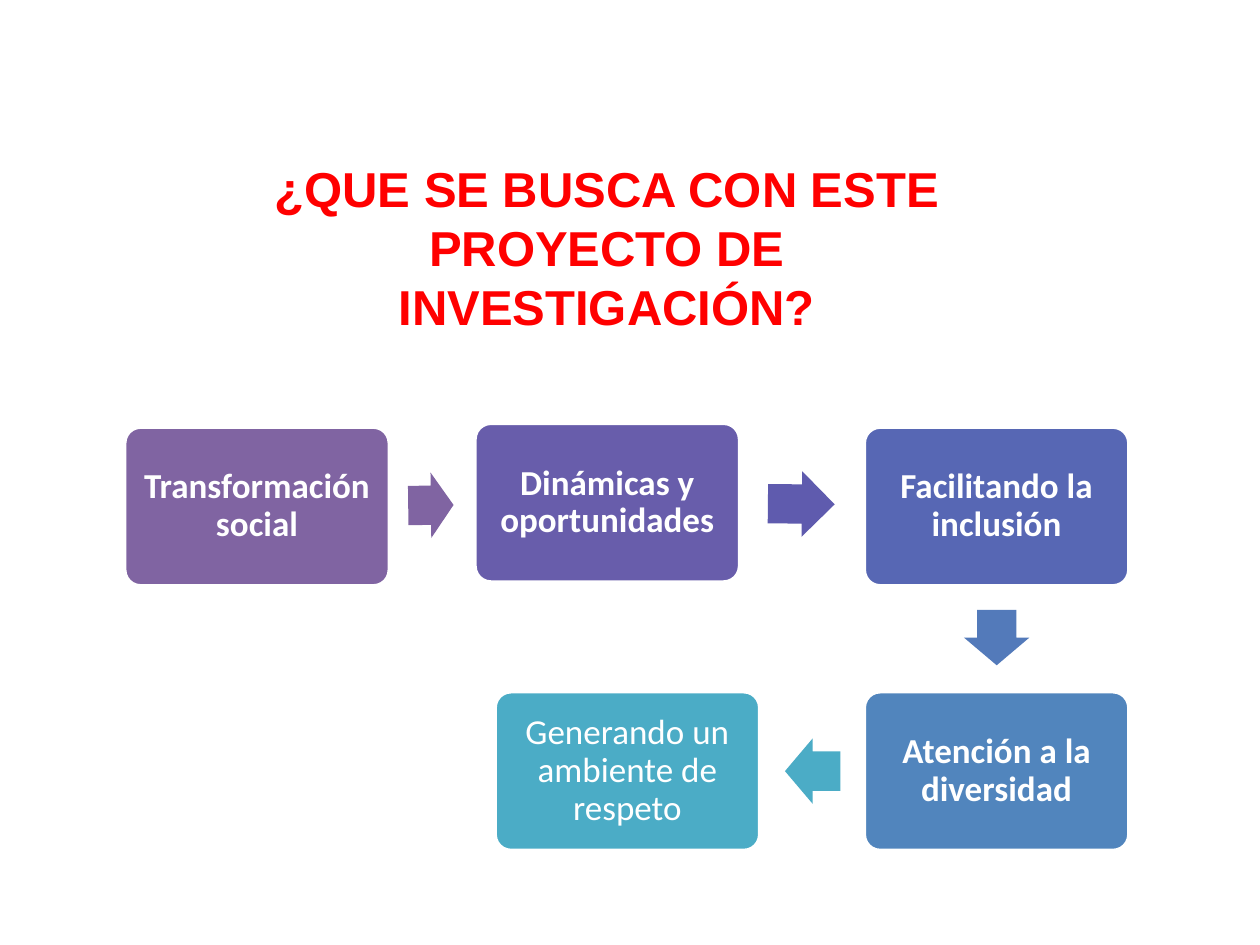
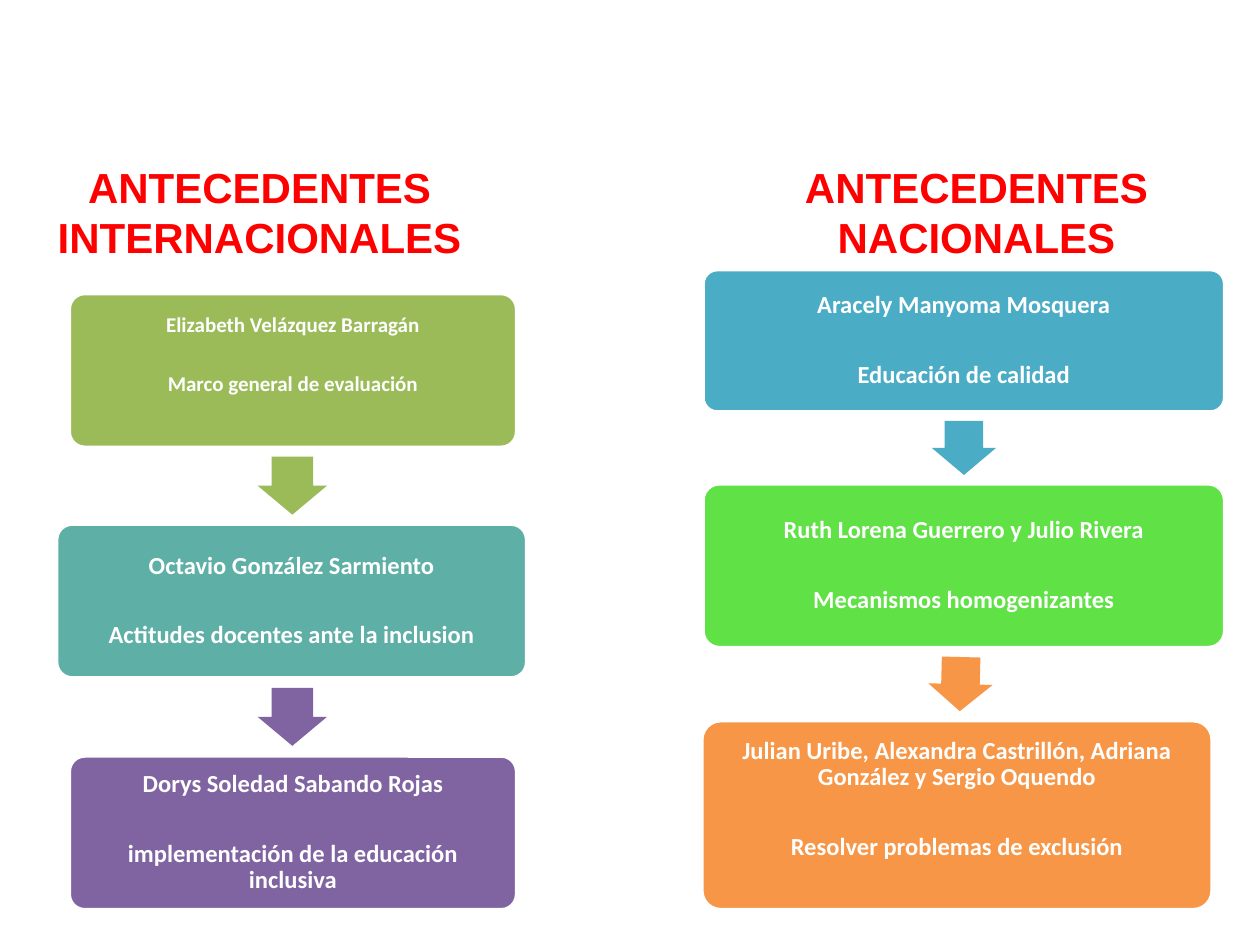
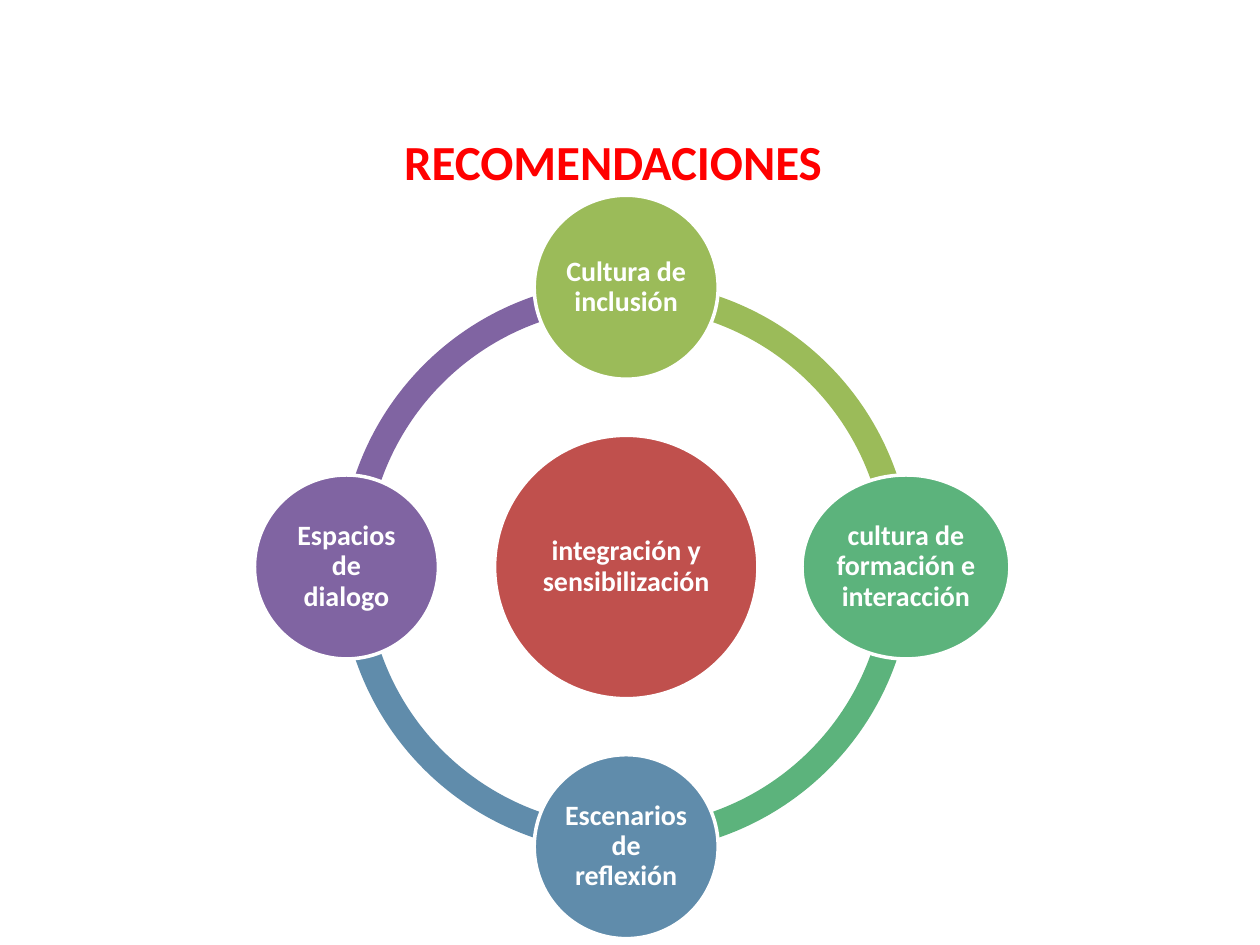
"""Build three slides on an inclusive education project: goals, background and recommendations."""
from math import cos, radians, sin

from pptx import Presentation
from pptx.dml.color import RGBColor
from pptx.enum.shapes import MSO_SHAPE as Preset
from pptx.enum.text import MSO_ANCHOR as Anchor, MSO_AUTO_SIZE as AutoSize, PP_ALIGN as Align
from pptx.util import Inches, Pt

WHITE = RGBColor(0xFF, 0xFF, 0xFF)
RED = RGBColor(0xFF, 0x00, 0x00)
PURPLE = RGBColor(0x80, 0x64, 0xA2)
VIOLET = RGBColor(0x68, 0x5D, 0xAB)
INDIGO = RGBColor(0x5F, 0x5B, 0xAE)
COBALT = RGBColor(0x57, 0x67, 0xB4)
AZURE = RGBColor(0x53, 0x7A, 0xBA)
BLUE = RGBColor(0x51, 0x85, 0xBD)
AQUA = RGBColor(0x4B, 0xAC, 0xC6)
OLIVE = RGBColor(0x9B, 0xBB, 0x59)
TEAL = RGBColor(0x5E, 0xAF, 0xA6)
LIME = RGBColor(0x60, 0xE1, 0x46)
ORANGE = RGBColor(0xF7, 0x96, 0x46)
JADE = RGBColor(0x5C, 0xB3, 0x7C)
STEEL = RGBColor(0x60, 0x8C, 0xAB)
BRICK = RGBColor(0xC0, 0x50, 0x4D)

GOAL_SIZE = (2.1, 1.26)
GOALS = [
    ("Transformación social", 0.99, 3.39, PURPLE, True),
    ("Dinámicas y oportunidades", 3.77, 3.36, VIOLET, True),
    ("Facilitando la inclusión", 6.86, 3.39, COBALT, True),
    ("Atención a la diversidad", 6.86, 5.49, BLUE, True),
    ("Generando un ambiente de respeto", 3.93, 5.49, AQUA, False),
]
GOAL_ARROWS = [
    (3.42, 4.01, 0.36, 359.3, PURPLE),
    (6.36, 4.0, 0.53, 0.6, INDIGO),
    (7.91, 5.06, 0.44, 90, AZURE),
    (6.45, 6.12, 0.44, 180, AQUA),
]

INTERNATIONAL = [
    ("Elizabeth Velázquez Barragán", "Marco general de evaluación",
     (0.55, 2.33, 3.55, 1.22), OLIVE, 12, 0.24),
    ("Octavio González Sarmiento", "Actitudes docentes ante la inclusion",
     (0.45, 4.16, 3.73, 1.22), TEAL, 14, 0),
    ("Dorys Soledad Sabando Rojas", "implementación de la educación inclusiva",
     (0.55, 6, 3.55, 1.22), PURPLE, 14, 0),
]
NATIONAL = [
    ("Aracely Manyoma Mosquera", "Educación de calidad",
     (5.58, 2.14, 4.14, 1.13), AQUA, 14, 0),
    ("Ruth Lorena Guerrero y Julio Rivera", "Mecanismos homogenizantes",
     (5.58, 3.84, 4.14, 1.3), LIME, 14, 0),
    ("Julian Uribe, Alexandra Castrillón, Adriana González y Sergio Oquendo",
     "Resolver problemas de exclusión", (5.57, 5.72, 4.05, 1.5), ORANGE, 14, 0.25),
]
STUDY_COLUMNS = [
    (INTERNATIONAL, (OLIVE, PURPLE), (0.46, 0.55), (90, 90)),
    (NATIONAL, (AQUA, ORANGE), (0.43, 0.51), (90, 91.5)),
]
THEME_GAP = 1.76

RING_CENTER = (4.97, 4.5)
RING_RADIUS = 2.22
ARC_SIZE = 4.54
HUB = ("integración y sensibilización", 2.09, BRICK)
NODE_HEIGHT = 1.46
NODES = [
    ("Cultura de inclusión", 1.46, OLIVE),
    ("cultura de formación e interacción", 1.65, JADE),
    ("Escenarios de reflexión", 1.46, STEEL),
    ("Espacios de\vdialogo", 1.46, PURPLE),
]
QUARTER_TURN = 54
FULL_TURN = 216


def write(box, text, size, color, bold=True, font="Calibri"):
    frame = box.text_frame
    frame.word_wrap = True
    frame.text = text
    for para in frame.paragraphs:
        para.alignment = Align.CENTER
        for span in para.runs:
            span.font.name, span.font.size, span.font.bold = font, Pt(size), bold
            span.font.color.rgb = color
    return frame


def add_heading(page, text, area, size, font="Arial", box=None):
    left, top, width, height = map(Inches, area)
    if box is None:
        box = page.shapes.add_textbox(left, top, width, height)
    else:
        box.left, box.top, box.width, box.height = left, top, width, height
    frame = write(box, text, size, RED, font=font)
    frame.auto_size = AutoSize.NONE
    frame.vertical_anchor = Anchor.TOP


def add_page(deck, title, area, size, font="Arial"):
    page = deck.slides.add_slide(deck.slide_layouts[5])
    add_heading(page, title, area, size, font, page.shapes.title)
    return page


def add_filled(page, preset, area, color):
    shape = page.shapes.add_shape(preset, *map(Inches, area))
    shape.shadow.inherit = False
    shape.fill.solid()
    shape.fill.fore_color.rgb = color
    shape.line.fill.background()
    return shape


def add_node(page, preset, area, color, text, size, margin, bold=True):
    node = add_filled(page, preset, area, color)
    node.line.color.rgb = WHITE
    node.line.width = Pt(2)
    if preset == Preset.ROUNDED_RECTANGLE:
        node.adjustments[0] = 0.1
    frame = write(node, text, size, WHITE, bold)
    frame.vertical_anchor = Anchor.MIDDLE
    frame.margin_left = frame.margin_right = Inches(margin)
    frame.margin_top = frame.margin_bottom = Inches(margin)
    for para in frame.paragraphs:
        para.line_spacing = 0.9
    return frame


def centered(x, y, width, height):
    return x - width / 2, y - height / 2, width, height


def add_arrow(page, x, y, length, breadth, angle, color):
    arrow = add_filled(page, Preset.RIGHT_ARROW, centered(x, y, length, breadth), color)
    arrow.adjustments[0], arrow.adjustments[1] = 0.6, 0.5
    arrow.rotation = angle


def build_goals(deck):
    page = add_page(deck, "¿QUE SE BUSCA CON ESTE PROYECTO DE INVESTIGACIÓN?",
                    (1.82, 1.21, 5.99, 2.12), 28)
    for text, left, top, color, bold in GOALS:
        add_node(page, Preset.ROUNDED_RECTANGLE, (left, top, *GOAL_SIZE),
                 color, text, 20, 0.08, bold)
    for x, y, length, angle, color in GOAL_ARROWS:
        add_arrow(page, x, y, length, 0.52, angle, color)


def add_studies(page, studies, arrow_colors, arrow_size, angles):
    for author, theme, area, color, size, lift in studies:
        frame = add_node(page, Preset.ROUNDED_RECTANGLE, area, color,
                         f"{author}\n{theme}", size, 0.06)
        frame.paragraphs[0].space_after = Pt(size * THEME_GAP)
        frame.margin_bottom += Inches(lift)
    areas = [study[2] for study in studies]
    for upper, lower, color, angle in zip(areas, areas[1:], arrow_colors, angles):
        x = (upper[0] + upper[2] / 2 + lower[0] + lower[2] / 2) / 2
        y = (upper[1] + upper[3] + lower[1]) / 2
        add_arrow(page, x, y, *arrow_size, angle, color)


def build_background(deck):
    page = add_page(deck, "ANTECEDENTES\nINTERNACIONALES", (0.12, 1.23, 3.88, 0.91), 24)
    add_heading(page, "ANTECEDENTES\nNACIONALES", (6.02, 1.23, 3.46, 0.91), 24)
    for column in STUDY_COLUMNS:
        add_studies(page, *column)


def build_recommendations(deck):
    page = add_page(deck, "RECOMENDACIONES", (3.03, 0.99, 3.67, 0.57), 28, "Calibri")
    for index, (_, _, color) in enumerate(NODES):
        arc = add_filled(page, Preset.BLOCK_ARC,
                         centered(*RING_CENTER, ARC_SIZE, ARC_SIZE), color)
        start = (index + 3) * QUARTER_TURN
        arc.adjustments[0] = start % FULL_TURN
        arc.adjustments[1] = (start + QUARTER_TURN) % FULL_TURN
        arc.adjustments[2] = 0.046
    text, size, color = HUB
    add_node(page, Preset.OVAL, centered(*RING_CENTER, size, size), color, text, 16, 0.02)
    for index, (text, width, color) in enumerate(NODES):
        angle = radians(90 * index - 90)
        x = RING_CENTER[0] + RING_RADIUS * cos(angle)
        y = RING_CENTER[1] + RING_RADIUS * sin(angle)
        add_node(page, Preset.OVAL, centered(x, y, width, NODE_HEIGHT), color, text, 16, 0.02)


def main():
    deck = Presentation()
    deck.slide_width, deck.slide_height = Inches(10), Inches(7.5)
    build_goals(deck)
    build_background(deck)
    build_recommendations(deck)
    deck.save("out.pptx")


if __name__ == "__main__":
    main()
